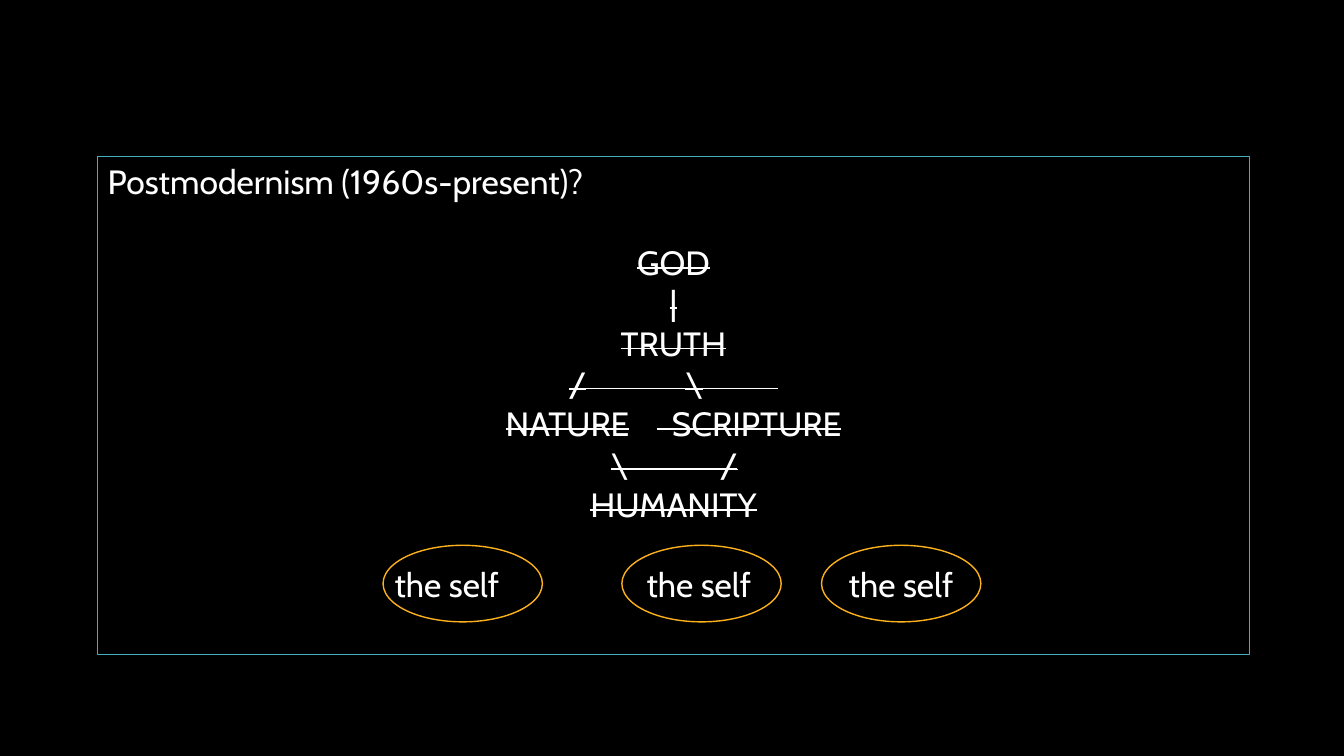
import dataclasses

import lxml.etree
import pptx
import pptx.dml.color
import pptx.enum.shapes
import pptx.enum.text
import pptx.oxml.ns
import pptx.util

Pt = pptx.util.Pt


@dataclasses.dataclass(frozen=True)
class Theme:
    background: str = "000000"
    text: str = "FFFFFF"
    frame: str = "41AEBD"
    ring: str = "FCB11C"
    font: str = "Cabin"
    size: float = 24
    line_pitch: float = 28.8


THEME = Theme()

# Each row: text, struck through, tab stops, blank space before
ROWS = [
    ("Postmodernism (1960s-present)?", False, None, 0),
    ("GOD", True, [], THEME.line_pitch),
    ("|", True, [], 0),
    ("TRUTH", True, [], 0),
    ("\t/\t\\", True, [329.4, 412.6], 0),
    ("\tNATURE\tSCRIPTURE", True, [284.4, 403], 0),
    ("\t\\\t/", True, [359.4, 437.3], 0),
    ("HUMANITY", True, [], 0),
    ("\tthe self\tthe self\tthe self", False, [205, 385, 529.4], THEME.line_pitch),
]

# Strikes that carry on through the gaps of the three tabbed rows
GAP_STRIKES = [(406.5, 555.7), (469.3, 482), (436.4, 526.4)]
FIRST_STRIKE_TOP = 277.6

RING_LEFTS = [273.6, 444.2, 586.8]


def rgb(value):
    return pptx.dml.color.RGBColor.from_string(value)


def add_outline(slide, kind, left, top, width, height, color, weight):
    outline = slide.shapes.add_shape(kind, Pt(left), Pt(top), Pt(width), Pt(height))
    outline.shadow.inherit = False
    outline.fill.background()
    outline.line.color.rgb = rgb(color)
    outline.line.width = Pt(weight)
    return outline


def set_tabs(paragraph, stops):
    properties = paragraph._p.get_or_add_pPr()
    tab_list = lxml.etree.SubElement(properties, pptx.oxml.ns.qn("a:tabLst"))
    for stop in stops:
        tab = lxml.etree.SubElement(tab_list, pptx.oxml.ns.qn("a:tab"))
        tab.set("pos", str(Pt(stop)))
        tab.set("algn", "l")


def write_row(paragraph, text, struck, stops, space_before):
    paragraph.text = text
    if stops:
        set_tabs(paragraph, stops)
    centred = stops == []
    align = pptx.enum.text.PP_ALIGN
    paragraph.alignment = align.CENTER if centred else align.LEFT
    paragraph.space_before = Pt(space_before)
    paragraph.line_spacing = Pt(THEME.line_pitch)
    for run in paragraph.runs:
        run.font.name = THEME.font
        run.font.size = Pt(THEME.size)
        run.font.color.rgb = rgb(THEME.text)
        if struck:
            run._r.get_or_add_rPr().set("strike", "sngStrike")


def add_strike(slide, start, end, top):
    strike = slide.shapes.add_connector(
        pptx.enum.shapes.MSO_CONNECTOR.STRAIGHT, Pt(start), Pt(top), Pt(end), Pt(top))
    strike.line.color.rgb = rgb(THEME.text)
    strike.line.width = Pt(1.2)
    lxml.etree.SubElement(strike._element.spPr, pptx.oxml.ns.qn("a:effectLst"))


def main():
    deck = pptx.Presentation()
    deck.slide_width, deck.slide_height = Pt(960), Pt(540)
    slide = deck.slides.add_slide(deck.slide_layouts[6])
    slide.background.fill.solid()
    slide.background.fill.fore_color.rgb = rgb(THEME.background)
    shape_kinds = pptx.enum.shapes.MSO_SHAPE

    # Framed hierarchy
    frame = add_outline(slide, shape_kinds.RECTANGLE, 69.8, 111.6, 822.6, 356.2,
                        THEME.frame, 0.75)
    hierarchy = frame.text_frame
    hierarchy.word_wrap = True
    hierarchy.vertical_anchor = pptx.enum.text.MSO_ANCHOR.TOP
    for index, row in enumerate(ROWS):
        paragraph = hierarchy.add_paragraph() if index else hierarchy.paragraphs[0]
        write_row(paragraph, *row)

    # Strikes across the gaps
    for index, (start, end) in enumerate(GAP_STRIKES):
        add_strike(slide, start, end, FIRST_STRIKE_TOP + index * THEME.line_pitch)

    # Rings around each self
    for left in RING_LEFTS:
        add_outline(slide, shape_kinds.OVAL, left, 389.5, 113.8, 54.7, THEME.ring, 1)

    deck.save("out.pptx")


if __name__ == "__main__":
    main()
